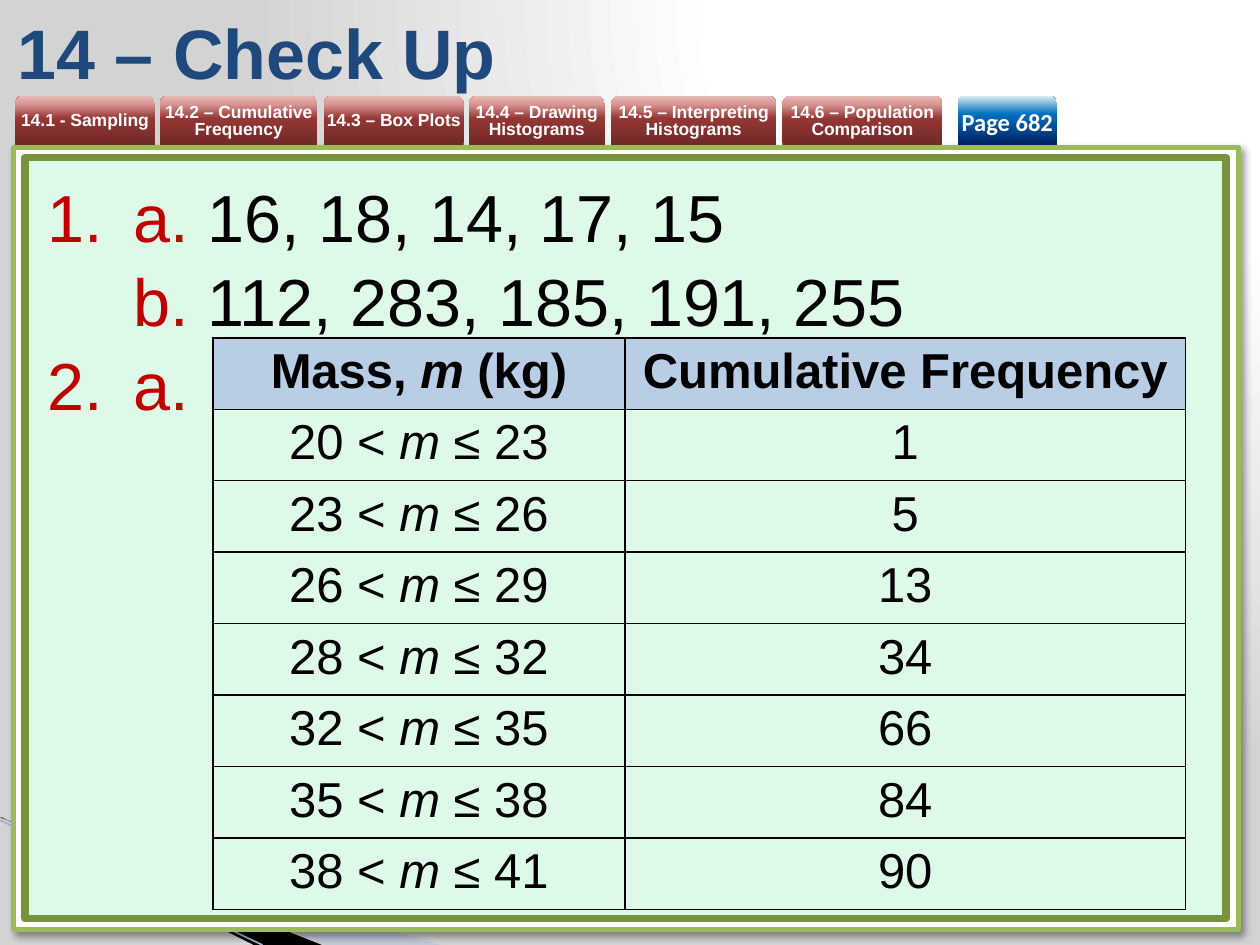
import pptx
import pptx.util
import pptx.dml.color
import pptx.enum.shapes
import pptx.enum.text
import pptx.oxml
import pptx.oxml.ns
from dataclasses import dataclass

Pt = pptx.util.Pt
SHAPES = pptx.enum.shapes.MSO_SHAPE
ALIGN = pptx.enum.text.PP_ALIGN
MIDDLE = pptx.enum.text.MSO_ANCHOR.MIDDLE


@dataclass(frozen=True)
class Theme:
    font: str = "Arial"
    button_font: str = "Calibri"
    title_size: float = 40
    answer_size: float = 38
    table_size: float = 28
    button_size: float = 14
    tab_size: float = 10
    title: str = "1F497D"
    label: str = "C00000"
    black: str = "000000"
    white: str = "FFFFFF"
    frame: str = "9BBB59"
    panel: str = "DFF9E8"
    panel_line: str = "77933C"
    header: str = "B9CDE5"
    ribbon: str = "A7B9DB"
    ribbon_line: str = "9EB3D6"
    tab_stops: tuple = ((0, "6F2927"), (54, "953735"), (83, "D99694"), (100, "E6B9B8"))
    button_stops: tuple = ((0, "002060"), (63, "0070C0"), (100, "DBEEF4"))
    page_stops: tuple = ((0, "FFFFFF"), (40, "FFFFFF"), (100, "D3D3D3"))


def rgb(value):
    return pptx.dml.color.RGBColor.from_string(value)


def add_xml(parent, markup):
    head, tail = markup.split(">", 1)
    namespace = pptx.oxml.ns.nsdecls("a")
    if head.endswith("/"):
        head = f"{head[:-1]} {namespace}/"
    else:
        head = f"{head} {namespace}"
    parent.append(pptx.oxml.parse_xml(f"{head}>{tail}"))


class CheckUpSlide:
    """Draws the elements of a check-up slide in one theme."""

    def __init__(self, page, theme):
        self.page = page
        self.theme = theme

    def gradient(self, fill, element, stops, direction):
        fill.gradient()
        gradient = element.xpath(".//a:gradFill")[0]
        for child in list(gradient):
            gradient.remove(child)
        marks = "".join(
            f'<a:gs pos="{place * 1000}"><a:srgbClr val="{color}"/></a:gs>' for place, color in stops
        )
        add_xml(gradient, f"<a:gsLst>{marks}</a:gsLst>")
        add_xml(gradient, direction)

    def background(self):
        self.gradient(
            self.page.background.fill, self.page.element, self.theme.page_stops,
            '<a:path path="circle"><a:fillToRect l="65000" t="0" r="0" b="98000"/></a:path>',
        )

    def style(self, span, size, color, bold=False, italic=False, font=None):
        span.font.name = font or self.theme.font
        span.font.size = Pt(size)
        span.font.color.rgb = rgb(color)
        span.font.bold = bold
        span.font.italic = italic

    def title(self, text, left, top, width, height):
        box = self.page.shapes.title
        box.left, box.top, box.width, box.height = Pt(left), Pt(top), Pt(width), Pt(height)
        frame = box.text_frame
        frame.text = text
        frame.vertical_anchor = MIDDLE
        para = frame.paragraphs[0]
        para.alignment = ALIGN.LEFT
        self.style(para.runs[0], self.theme.title_size, self.theme.title, bold=True)

    def ribbon(self, points, color, alpha=100):
        builder = self.page.shapes.build_freeform(*points[0], scale=12700.0)
        builder.add_line_segments(points[1:], close=True)
        shape = builder.convert_to_shape()
        shape.shadow.inherit = False
        shape.fill.solid()
        shape.fill.fore_color.rgb = rgb(color)
        shape.line.fill.background()
        if alpha < 100:
            add_xml(shape.element.xpath(".//a:solidFill/a:srgbClr")[0], f'<a:alpha val="{alpha * 1000}"/>')

    def line(self, start, end, color, width):
        line = self.page.shapes.add_connector(
            pptx.enum.shapes.MSO_CONNECTOR.STRAIGHT, *(Pt(value) for value in start + end)
        )
        line.line.color.rgb = rgb(color)
        line.line.width = Pt(width)
        add_xml(line.element.spPr, "<a:effectLst/>")

    def panel(self, left, top, width, height, fill, color, weight, shadow=False):
        shape = self.page.shapes.add_shape(SHAPES.RECTANGLE, Pt(left), Pt(top), Pt(width), Pt(height))
        shape.shadow.inherit = False
        shape.fill.solid()
        shape.fill.fore_color.rgb = rgb(fill)
        shape.line.color.rgb = rgb(color)
        shape.line.width = Pt(weight)
        if shadow:
            add_xml(
                shape.element.xpath(".//a:effectLst")[0],
                f'<a:outerShdw blurRad="{Pt(4)}" dist="{Pt(3)}" dir="2700000" algn="tl">'
                f'<a:srgbClr val="{self.theme.black}"><a:alpha val="40000"/></a:srgbClr></a:outerShdw>',
            )

    def tab(self, text, left, width, stops, size, font=None, spacing=None):
        shape = self.page.shapes.add_shape(
            SHAPES.ROUND_2_SAME_RECTANGLE, Pt(left), Pt(54.7), Pt(width), Pt(28.1)
        )
        shape.shadow.inherit = False
        self.gradient(shape.fill, shape.element, stops, '<a:lin ang="16200000" scaled="0"/>')
        shape.line.fill.background()
        frame = shape.text_frame
        frame.text = text
        frame.word_wrap = True
        frame.vertical_anchor = MIDDLE
        frame.margin_left = frame.margin_right = frame.margin_top = frame.margin_bottom = 0
        para = frame.paragraphs[0]
        para.alignment = ALIGN.CENTER
        if spacing:
            para.line_spacing = Pt(spacing)
        self.style(para.runs[0], size, self.theme.white, bold=True, font=font)

    def answers(self, questions, left, top, width, height):
        frame = self.page.shapes.add_textbox(Pt(left), Pt(top), Pt(width), Pt(height)).text_frame
        frame.word_wrap = True
        for number, parts in enumerate(questions):
            para = frame.add_paragraph() if number else frame.paragraphs[0]
            para.line_spacing = 1.05
            properties = para._p.get_or_add_pPr()
            properties.set("marL", str(Pt(49)))
            properties.set("indent", str(-Pt(49)))
            add_xml(properties, f'<a:buClr><a:srgbClr val="{self.theme.label}"/></a:buClr>')
            add_xml(properties, '<a:buFont typeface="+mj-lt"/>')
            add_xml(properties, '<a:buAutoNum type="arabicPeriod"/>')
            for index, (label, answer) in enumerate(parts):
                if index:
                    para.add_line_break()
                for text, color in ((label, self.theme.label), (answer, self.theme.black)):
                    if text:
                        span = para.add_run()
                        span.text = text
                        self.style(span, self.theme.answer_size, color)

    def cell(self, cell, pieces, header):
        cell.margin_left = cell.margin_right = cell.margin_top = cell.margin_bottom = Pt(3.6)
        para = cell.text_frame.paragraphs[0]
        para.alignment = ALIGN.CENTER
        for text in pieces:
            span = para.add_run()
            span.text = text
            self.style(span, self.theme.table_size, self.theme.black, bold=header, italic=text == "m")
        for side in "LRTB":
            add_xml(
                cell._tc.get_or_add_tcPr(),
                f'<a:ln{side} w="{Pt(1)}"><a:solidFill><a:srgbClr val="{self.theme.black}"/>'
                f"</a:solidFill></a:ln{side}>",
            )
        if header:
            cell.fill.solid()
            cell.fill.fore_color.rgb = rgb(self.theme.header)
        else:
            cell.fill.background()

    def table(self, rows, left, top, widths, row_height):
        table = self.page.shapes.add_table(
            len(rows), len(widths), Pt(left), Pt(top), Pt(sum(widths)), Pt(row_height * len(rows))
        ).table
        table.first_row = table.horz_banding = False
        for column, width in zip(table.columns, widths):
            column.width = Pt(width)
        for index, (row, values) in enumerate(zip(table.rows, rows)):
            row.height = Pt(row_height)
            for cell, pieces in zip(row.cells, values):
                self.cell(cell, pieces, header=index == 0)


def main():
    deck = pptx.Presentation()
    deck.slide_width, deck.slide_height = Pt(720), Pt(540)
    theme = Theme()
    slide = CheckUpSlide(deck.slides.add_slide(deck.slide_layouts[5]), theme)

    slide.background()
    slide.ribbon([(0, 468), (251.5, 540), (186.5, 540), (0, 467.3)], theme.ribbon, alpha=40)
    slide.ribbon([(0, 466.6), (184.3, 539.5), (145.4, 540), (0.7, 467.3)], theme.black)
    slide.line((0, 468.7), (150, 540), theme.ribbon_line, 0.95)
    slide.panel(7.9, 84.2, 699.8, 447.1, theme.white, theme.frame, 3, shadow=True)
    slide.panel(14.4, 90, 686.2, 434.9, theme.panel, theme.panel_line, 4.33)

    tabs = [
        ("14.1 - Sampling", 8.6, 79.9),
        ("14.2 – Cumulative Frequency", 91.4, 90),
        ("14.3 – Box Plots", 185, 79.9),
        ("14.4 – Drawing Histograms", 267.8, 77.8),
        ("14.5 – Interpreting Histograms", 349.2, 94.3),
        ("14.6 – Population Comparison", 447.1, 91.4),
    ]
    for text, left, width in tabs:
        slide.tab(text, left, width, theme.tab_stops, theme.tab_size, spacing=10)
    slide.tab("Page 682", 547.2, 56.9, theme.button_stops, theme.button_size, font=theme.button_font)

    slide.title("14 – Check Up", 2.9, 3.6, 607, 51.1)
    slide.answers(
        [[("a. ", "16, 18, 14, 17, 15"), ("b. ", "112, 283, 185, 191, 255")], [("a.", "")]],
        20.2, 95, 674.6, 145.4,
    )
    masses = [(20, 23, 1), (23, 26, 5), (26, 29, 13), (28, 32, 34), (32, 35, 66), (35, 38, 84), (38, 41, 90)]
    rows = [(("Mass, ", "m", " (kg)"), ("Cumulative Frequency",))]
    rows += [((f"{low} < ", "m", f" ≤ {high}"), (str(total),)) for low, high, total in masses]
    slide.table(rows, 121.7, 193, (235.4, 320.4), 40.8)
    deck.save("out.pptx")


if __name__ == "__main__":
    main()
